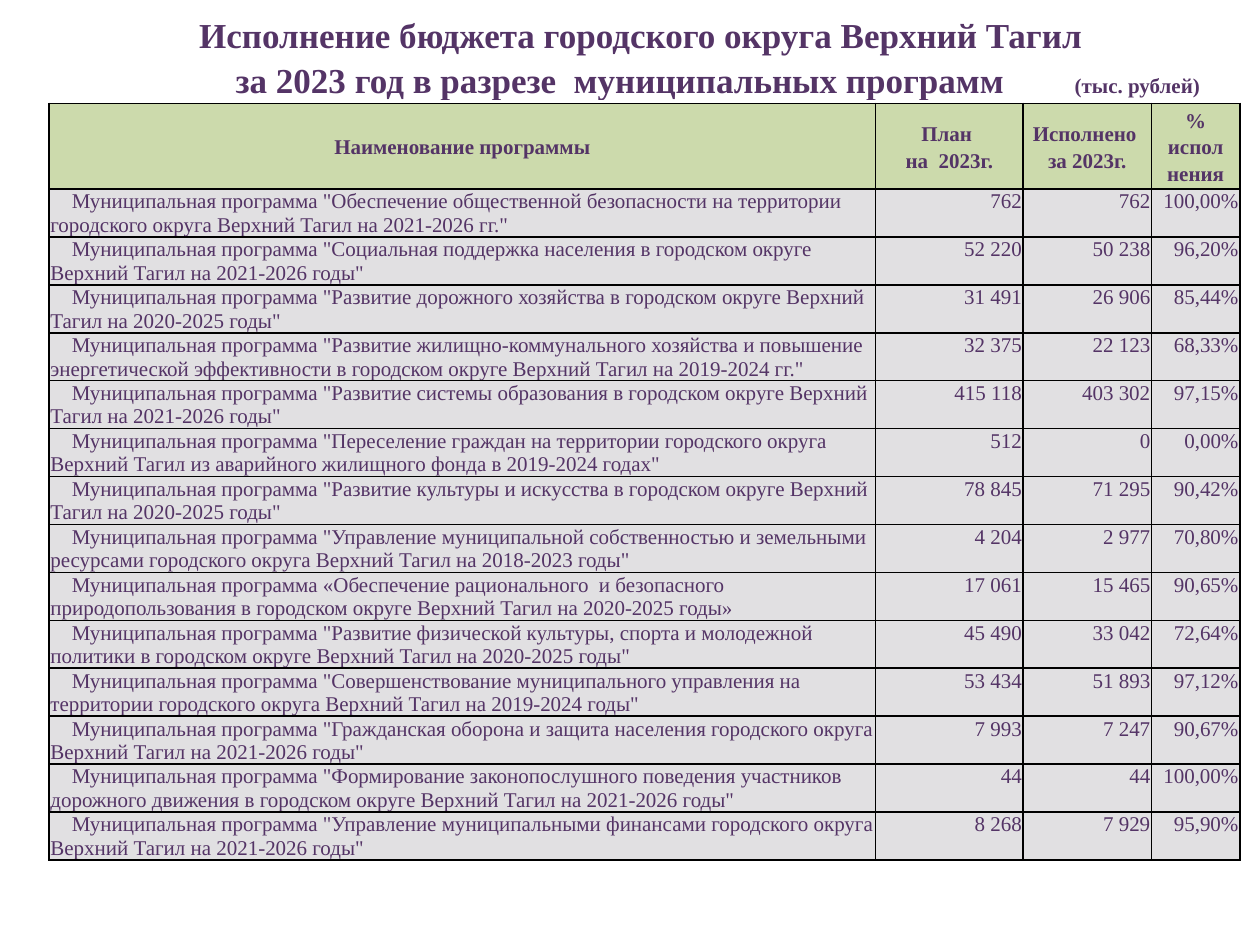
"""Build the slide on budget execution by municipal programme."""
from lxml import etree
from pptx import Presentation
from pptx import util as u
from pptx.dml.color import RGBColor
from pptx.enum import text
from pptx.oxml import parse_xml
from pptx.oxml.ns import nsdecls, qn

THEME = {
    "font": "Times New Roman",
    "ink": RGBColor.from_string("543466"),
    "header": RGBColor.from_string("CCDAAC"),
    "body": RGBColor.from_string("E1E0E2"),
    "border": "000000",
    "title_size": u.Pt(20),
    "text_size": u.Pt(12),
}
LEFT, CENTER, RIGHT = text.PP_ALIGN.LEFT, text.PP_ALIGN.CENTER, text.PP_ALIGN.RIGHT
COLUMNS = [656, 117, 102, 70]
HEADER_ROW, BODY_ROW = 68, 38
HEADINGS = ["Наименование программы", "План \nна  2023г.", "Исполнено \nза 2023г.", "% испол нения"]
PROGRAMMES = [
    ('"Обеспечение общественной безопасности на территории городского округа Верхний Тагил на 2021-2026 гг."', "762", "762", "100,00%"),
    ('"Социальная поддержка населения в городском округе Верхний Тагил на 2021-2026 годы"', "52 220", "50 238", "96,20%"),
    ('"Развитие дорожного хозяйства в городском округе Верхний Тагил на 2020-2025 годы"', "31 491", "26 906", "85,44%"),
    ('"Развитие жилищно-коммунального хозяйства и повышение энергетической эффективности в городском округе Верхний Тагил на 2019-2024 гг."', "32 375", "22 123", "68,33%"),
    ('"Развитие системы образования в городском округе Верхний Тагил на 2021-2026 годы"', "415 118", "403 302", "97,15%"),
    ('"Переселение граждан на территории городского округа Верхний Тагил из аварийного жилищного фонда в 2019-2024 годах"', "512", "0", "0,00%"),
    ('"Развитие культуры и искусства в городском округе Верхний Тагил на 2020-2025 годы"', "78 845", "71 295", "90,42%"),
    ('"Управление муниципальной собственностью и земельными ресурсами городского округа Верхний Тагил на 2018-2023 годы"', "4 204", "2 977", "70,80%"),
    ('«Обеспечение рационального  и безопасного природопользования в городском округе Верхний Тагил на 2020-2025 годы»', "17 061", "15 465", "90,65%"),
    ('"Развитие физической культуры, спорта и молодежной политики в городском округе Верхний Тагил на 2020-2025 годы"', "45 490", "33 042", "72,64%"),
    ('"Совершенствование муниципального управления на территории городского округа Верхний Тагил на 2019-2024 годы"', "53 434", "51 893", "97,12%"),
    ('"Гражданская оборона и защита населения городского округа Верхний Тагил на 2021-2026 годы"', "7 993", "7 247", "90,67%"),
    ('"Формирование законопослушного поведения участников дорожного движения в городском округе Верхний Тагил на 2021-2026 годы"', "44", "44", "100,00%"),
    ('"Управление муниципальными финансами городского округа Верхний Тагил на 2021-2026 годы"', "8 268", "7 929", "95,90%"),
]


def write(paragraph, content, size=THEME["text_size"], bold=False, align=LEFT, spacing=1.0, indent=0, tabs=()):
    """Add formatted text to a paragraph."""
    properties = paragraph._p.get_or_add_pPr()
    if indent:
        properties.set("indent", str(indent))
    if tabs:
        tab_list = etree.SubElement(properties, qn("a:tabLst"))
        for position in tabs:
            etree.SubElement(tab_list, qn("a:tab"), pos=str(position), algn="l")
    paragraph.alignment = align
    paragraph.line_spacing = spacing
    run = paragraph.add_run()
    run.text = content
    run.font.name = THEME["font"]
    run.font.size = size
    run.font.bold = bold
    run.font.color.rgb = THEME["ink"]


def add_plain_table(slide, rows, columns, left, top, width, height):
    """Add a table without banding or header style."""
    table = slide.shapes.add_table(rows, columns, left, top, width, height).table
    table.first_row = False
    table.horz_banding = False
    return table


presentation = Presentation()
presentation.slide_width = u.Inches(10)
presentation.slide_height = u.Inches(7.5)
slide = presentation.slides.add_slide(presentation.slide_layouts[6])
grid = presentation.slide_width // 1000

title = add_plain_table(slide, 1, 1, 55 * grid, -16 * grid, 914 * grid, 96 * grid).cell(0, 0)
title.fill.background()
title.vertical_anchor = text.MSO_ANCHOR.BOTTOM
title.margin_left = title.margin_right = 7 * grid
title.margin_top = title.margin_bottom = 0
title_style = {"size": THEME["title_size"], "bold": True, "spacing": 1.15}
write(title.text_frame.paragraphs[0], "Исполнение бюджета городского округа Верхний Тагил ", align=CENTER, **title_style)
second_line = title.text_frame.add_paragraph()
write(second_line, "\tза 2023 год в разрезе  муниципальных программ\t", tabs=(125 * grid, 791 * grid), **title_style)
write(second_line, "(тыс. рублей)", bold=True, spacing=1.15)

row_heights = [HEADER_ROW] + [BODY_ROW] * len(PROGRAMMES)
budget = add_plain_table(slide, len(row_heights), len(COLUMNS), 39 * grid, 82 * grid,
                         sum(COLUMNS) * grid, sum(row_heights) * grid)
for column, width in zip(budget.columns, COLUMNS):
    column.width = width * grid
for row, height in zip(budget.rows, row_heights):
    row.height = height * grid

for row_index, values in enumerate([HEADINGS] + PROGRAMMES):
    is_header = row_index == 0
    for column_index, value in enumerate(values):
        cell = budget.cell(row_index, column_index)
        cell.margin_left = cell.margin_right = (4 if is_header else 1) * grid
        cell.margin_top = 0 if is_header else grid
        cell.margin_bottom = 0
        cell.vertical_anchor = text.MSO_ANCHOR.MIDDLE if is_header else text.MSO_ANCHOR.TOP
        for side in ("L", "R", "T", "B"):
            cell._tc.get_or_add_tcPr().append(parse_xml(
                f'<a:ln{side} {nsdecls("a")} w="{u.Pt(1)}"><a:solidFill>'
                f'<a:srgbClr val="{THEME["border"]}"/></a:solidFill></a:ln{side}>'))
        cell.fill.solid()
        cell.fill.fore_color.rgb = THEME["header" if is_header else "body"]
        if is_header:
            style = {"bold": True, "align": CENTER, "spacing": 1.15}
        elif column_index == 0:
            value = f"Муниципальная программа {value}"
            style = {"indent": 17 * grid}
        else:
            style = {"align": RIGHT}
        for line_index, line in enumerate(value.split("\n")):
            frame = cell.text_frame
            write(frame.add_paragraph() if line_index else frame.paragraphs[0], line, **style)

presentation.save("out.pptx")
